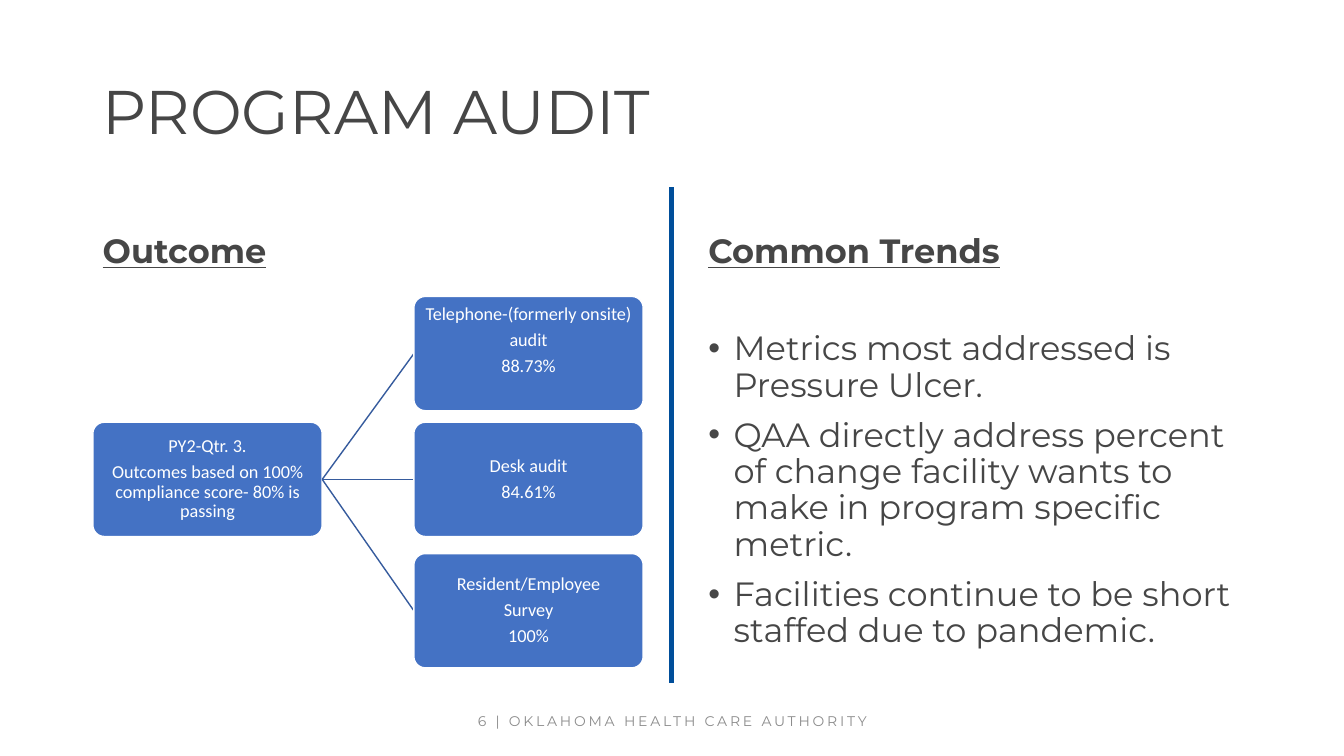
from dataclasses import dataclass

from lxml import etree
from pptx import Presentation
from pptx.dml.color import RGBColor
from pptx.enum.shapes import MSO_CONNECTOR, MSO_SHAPE
from pptx.enum.text import MSO_ANCHOR, PP_ALIGN
from pptx.oxml.ns import qn
from pptx.util import Cm, Pt

STRAIGHT = MSO_CONNECTOR.STRAIGHT
ROUND = MSO_SHAPE.ROUNDED_RECTANGLE
MIDDLE, BOTTOM, TOP = MSO_ANCHOR.MIDDLE, MSO_ANCHOR.BOTTOM, MSO_ANCHOR.TOP
LEFT, CENTER = PP_ALIGN.LEFT, PP_ALIGN.CENTER


@dataclass(frozen=True)
class Theme:
    ink: str = "464646"
    gray: str = "8C8C8C"
    white: str = "FFFFFF"
    rule: str = "004E9A"
    box: str = "4472C4"
    link: str = "365B9D"
    main: str = "Montserrat"
    chart: str = "Calibri"
    title: int = 44
    body: int = 24
    node: int = 13
    foot: int = 10


class Deck:
    def __init__(self, theme):
        self.theme = theme
        self.file = Presentation()
        self.file.slide_width, self.file.slide_height = Cm(33.87), Cm(19.05)
        self.slide = self.file.slides.add_slide(self.file.slide_layouts[5])

    def label(self, shape, lines, size, color=None, font=None, align=LEFT,
              frame=None, para=None, bold=None, under=None):
        """Fill a shape with one paragraph per line."""
        text = shape.text_frame
        base = {"word_wrap": True, "vertical_anchor": MIDDLE}
        for key, value in (base | (frame or {})).items():
            setattr(text, key, value)
        style = {"alignment": align, "line_spacing": 0.9} | (para or {})
        look = {"name": font or self.theme.main, "size": Pt(size),
                "bold": bold, "underline": under}
        text.text = "\n".join(lines)
        for part in text.paragraphs:
            for key, value in style.items():
                setattr(part, key, value)
            run = part.runs[0]
            for key, value in look.items():
                setattr(run.font, key, value)
            run.font.color.rgb = RGBColor.from_string(color or self.theme.ink)
        return text

    def title(self, words, area):
        shape = self.slide.shapes.title
        for key, value in zip(("left", "top", "width", "height"), area):
            setattr(shape, key, Cm(value))
        self.label(shape, [words], self.theme.title)

    def text(self, lines, area, size, **style):
        shape = self.slide.shapes.add_textbox(*map(Cm, area))
        return self.label(shape, lines, size, **style)

    def head(self, words, area):
        self.text([words], area, self.theme.body, bold=True, under=True,
                  frame={"vertical_anchor": BOTTOM})

    def list(self, lines, area, inset):
        text = self.text(lines, area, self.theme.body,
                         frame={"vertical_anchor": TOP, "margin_top": Cm(inset)},
                         para={"space_before": Pt(10)})
        text.paragraphs[0].space_before = Pt(0)
        for part in text.paragraphs:
            props = part._p.get_or_add_pPr()
            props.set("marL", str(Cm(0.64)))
            props.set("indent", str(-Cm(0.64)))
            etree.SubElement(props, qn("a:buFont")).set("typeface", "Arial")
            etree.SubElement(props, qn("a:buChar")).set("char", "•")

    def foot(self, words, area):
        text = self.text([words], area, self.theme.foot, color=self.theme.gray,
                         align=CENTER, para={"line_spacing": 1.0})
        text.paragraphs[0].runs[0]._r.get_or_add_rPr().set("spc", "200")

    def line(self, start, end, color, width):
        shape = self.slide.shapes.add_connector(STRAIGHT, *map(Cm, start + end))
        shape.line.color.rgb = RGBColor.from_string(color)
        shape.line.width = Pt(width)
        etree.SubElement(shape._element.spPr, qn("a:effectLst"))

    def node(self, lines, area, lift=0):
        """Draw a rounded box; lift raises its text above the middle."""
        shape = self.slide.shapes.add_shape(ROUND, *map(Cm, area))
        shape.shadow.inherit = False
        shape.adjustments[0] = 0.1
        shape.fill.solid()
        shape.fill.fore_color.rgb = RGBColor.from_string(self.theme.box)
        shape.line.color.rgb = RGBColor.from_string(self.theme.white)
        shape.line.width = Pt(1)
        pad = Cm(0.11)
        self.label(shape, lines, self.theme.node, color=self.theme.white,
                   font=self.theme.chart, align=CENTER,
                   frame={"margin_left": pad, "margin_right": pad,
                          "margin_top": pad, "margin_bottom": pad + Cm(lift)},
                   para={"space_after": Pt(4.5)})


def main():
    theme = Theme()
    deck = Deck(theme)

    # Title, divider and footer
    deck.title("PROGRAM AUDIT", (2.32, 1.04, 29.21, 3.68))
    deck.line((16.92, 17.2), (16.92, 4.7), theme.rule, 3)
    deck.foot("6 | OKLAHOMA HEALTH CARE AUTHORITY", (2.34, 17.65, 29.21, 1.02))

    # Column headings
    for words, left in (("Outcome", 2.34), ("Common Trends", 17.6)):
        deck.head(words, (left, 4.67, 13.94, 2.29))

    # Trends
    deck.list(["Metrics most addressed is Pressure Ulcer.",
               "QAA directly address percent of change facility wants to "
               "make in program specific metric.",
               "Facilities continue to be short staffed due to pandemic."],
              (17.6, 6.96, 13.94, 10.24), 1.4)

    # Outcome tree
    wide, high = 5.78, 2.88
    root, leaf, mid = 2.34, 10.43, 10.64
    audits = (
        (["Telephone-(formerly onsite)", "audit", "88.73%"], 7.47, 0.66),
        (["Desk audit", "84.61%"], mid, 0),
        (["Resident/Employee", "Survey", "100%"], 13.95, 0),
    )
    deck.node(["PY2-Qtr. 3.",
               "Outcomes based on 100% compliance score- 80% is passing"],
              (root, mid, wide, high))
    for lines, top, lift in audits:
        deck.line((root + wide, mid + high / 2), (leaf, top + high / 2),
                  theme.link, 1)
        deck.node(lines, (leaf, top, wide, high), lift)

    deck.file.save("out.pptx")


if __name__ == "__main__":
    main()
